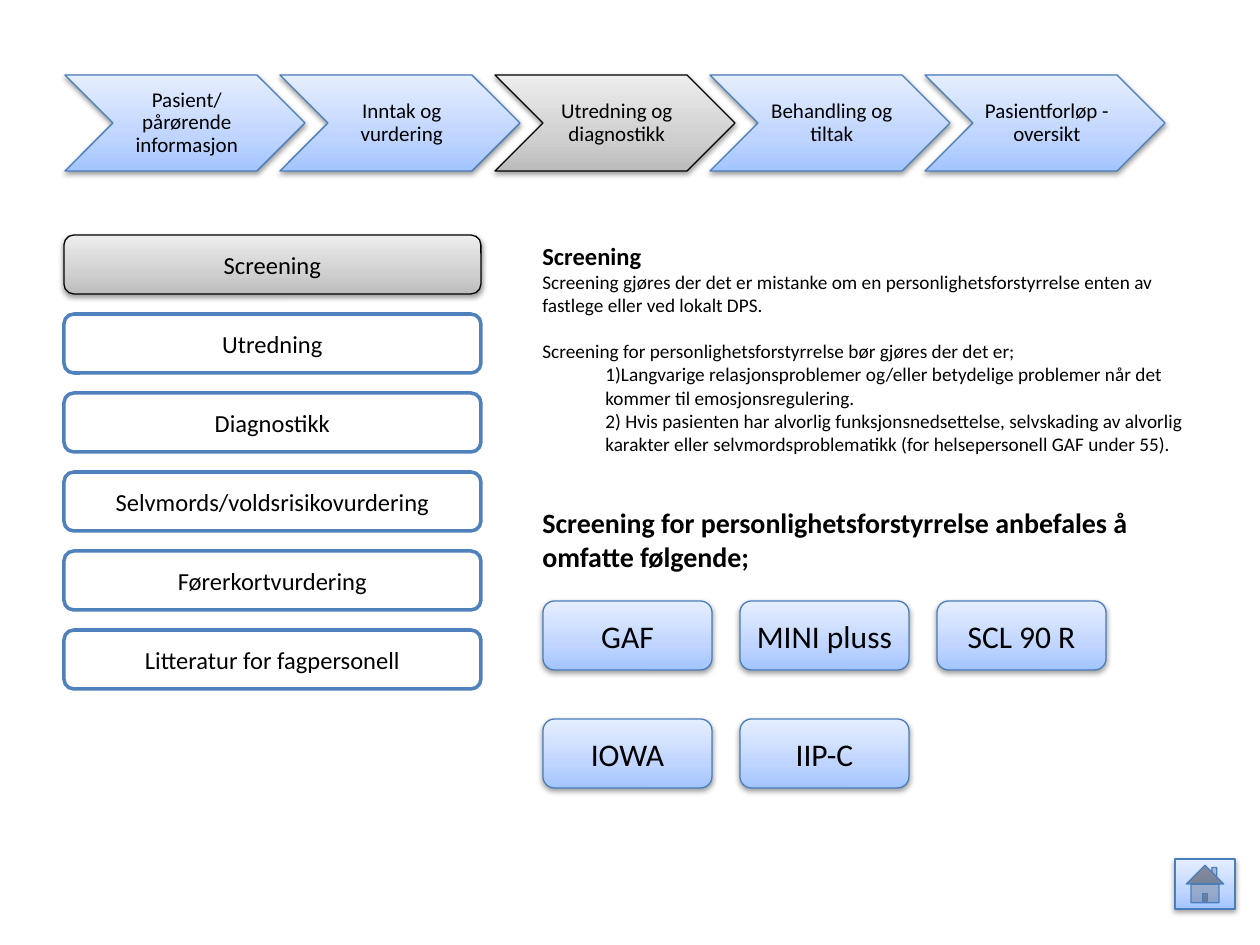
import copy

from lxml import etree
from pptx import Presentation
from pptx import util as u
from pptx.dml.color import RGBColor
from pptx.enum import shapes, text
from pptx.oxml import ns

PX = 914400 / 126
BLUE = ("A3C4FF", "BFD5FF", "E5EEFF"), "4A7EBB"
GRAY = ("BCBCBC", "D0D0D0", "EDEDED"), "000000"
SHADOW = (
    f'<a:effectLst {ns.nsdecls("a")}><a:outerShdw blurRad="40000" dist="20000" '
    'dir="5400000" rotWithShape="0"><a:srgbClr val="000000"><a:alpha val="38000"/>'
    '</a:srgbClr></a:outerShdw></a:effectLst>'
)


def add_box(kind, left, top, width, height, palette=None, label="", size=14):
    """Add a labelled shape: shaded with a palette, otherwise white and outlined."""
    shape = slide.shapes.add_shape(kind, *(round(n * PX) for n in (left, top, width, height)))
    shape.shadow.inherit = False
    if palette:
        colors, line_color = palette
        shape.fill.gradient()
        shape.fill.gradient_angle = 90
        first = shape.fill._fill._gradFill.gsLst[0]
        first.addnext(copy.deepcopy(first))
        for stop, color, position in zip(shape.fill.gradient_stops, colors, (0, 0.35, 1)):
            stop.color.rgb = RGBColor.from_string(color)
            stop.position = position
        properties = shape._element.spPr
        properties.remove(properties.find(ns.qn("a:effectLst")))
        shape.line.width = u.Pt(0.75)
        properties.append(etree.fromstring(SHADOW))
    else:
        line_color = "4F81BD"
        shape.fill.solid()
        shape.fill.fore_color.rgb = RGBColor.from_string("FFFFFF")
        shape.line.width = u.Pt(2)
    shape.line.color.rgb = RGBColor.from_string(line_color)
    if label:
        shape.text_frame.word_wrap = True
        shape.text_frame.vertical_anchor = text.MSO_ANCHOR.MIDDLE
        paragraph = shape.text_frame.paragraphs[0]
        paragraph.alignment = text.PP_ALIGN.CENTER
        add_run(paragraph, label, size)
    return shape


def add_run(paragraph, words, size, bold=False):
    run = paragraph.add_run()
    run.text = words
    run.font.name = "Calibri"
    run.font.size = u.Pt(size)
    run.font.bold = bold
    run.font.color.rgb = RGBColor.from_string("000000")


presentation = Presentation()
presentation.slide_width = u.Inches(10)
presentation.slide_height = u.Inches(7.5)
slide = presentation.slides.add_slide(presentation.slide_layouts[6])

add_box(shapes.MSO_SHAPE.ACTION_BUTTON_HOME, 1175, 859, 60, 50, BLUE)

# Process steps, with the current one in gray
steps = ["Pasient/ pårørende informasjon", "Inntak og vurdering", "Utredning og diagnostikk",
         "Behandling og tiltak", "Pasientforløp - oversikt"]
for index, label in enumerate(steps):
    palette = GRAY if index == 2 else BLUE
    chevron = add_box(shapes.MSO_SHAPE.CHEVRON, 65 + 215 * index, 75, 240, 96, palette, label, 12)
    frame = chevron.text_frame
    frame.margin_left = u.Inches(0.05)
    frame.margin_top = frame.margin_right = frame.margin_bottom = u.Inches(0.02)
    frame.paragraphs[0].line_spacing = 0.9

# Menu for the current step
menu = ["Screening", "Utredning", "Diagnostikk", "Selvmords/voldsrisikovurdering",
        "Førerkortvurdering", "Litteratur for fagpersonell"]
for index, label in enumerate(menu):
    palette = GRAY if index == 0 else None
    add_box(shapes.MSO_SHAPE.ROUNDED_RECTANGLE, 64, 235 + 79 * index, 417, 59, palette, label)

# Guidance: words, size, bold, indent in px, space before in points
guidance = [
    ("Screening", 14, True, 0, 0),
    ("Screening gjøres der det er mistanke om en personlighetsforstyrrelse enten av "
     "fastlege eller ved lokalt DPS.", 11, False, 0, 0),
    ("Screening for personlighetsforstyrrelse bør gjøres der det er;", 11, False, 0, 13),
    ("1)Langvarige relasjonsproblemer og/eller betydelige problemer når det kommer til "
     "emosjonsregulering.", 11, False, 63, 0),
    ("2) Hvis pasienten har alvorlig funksjonsnedsettelse, selvskading av alvorlig karakter "
     "eller selvmordsproblematikk (for helsepersonell GAF under 55).", 11, False, 63, 0),
    ("Screening for personlighetsforstyrrelse anbefales å omfatte følgende;", 16, True, 0, 29),
]
textbox = slide.shapes.add_textbox(*(round(n * PX) for n in (530, 235, 694, 398)))
textbox.text_frame.word_wrap = True
for index, (words, size, bold, indent, space) in enumerate(guidance):
    frame = textbox.text_frame
    paragraph = frame.add_paragraph() if index else frame.paragraphs[0]
    if indent:
        paragraph._p.get_or_add_pPr().set("marL", str(round(indent * PX)))
    if space:
        paragraph.space_before = u.Pt(space)
    add_run(paragraph, words, size, bold)

# Screening instruments, three to a row
instruments = ["GAF", "MINI pluss", "SCL 90 R", "IOWA", "IIP-C"]
for index, label in enumerate(instruments):
    row, column = divmod(index, 3)
    add_box(shapes.MSO_SHAPE.ROUNDED_RECTANGLE, 543 + 197 * column, 601 + 118 * row,
            169, 69, BLUE, label, 18)

presentation.save("out.pptx")
